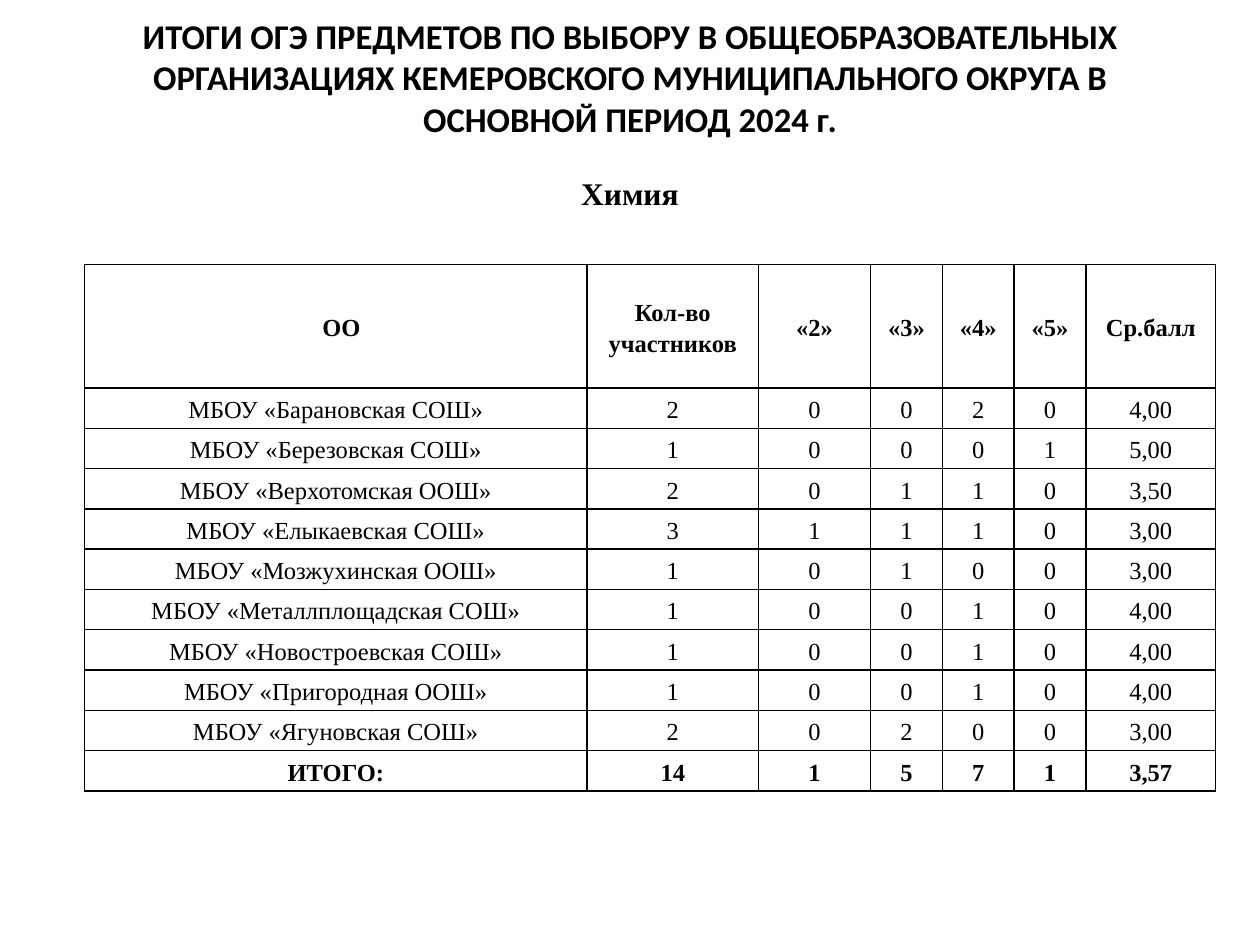
from typing import NamedTuple

from lxml.etree import SubElement
from pptx import Presentation
from pptx.dml.color import RGBColor
from pptx.enum.text import MSO_ANCHOR, PP_ALIGN
from pptx.oxml.ns import qn
from pptx.util import Inches, Pt

COLORS = {"text": "000000", "border": "000000", "background": "FFFFFF"}
SERIF = "Times New Roman"
COLUMN_WIDTHS = [3.99, 1.36, 0.89, 0.57, 0.57, 0.57, 1.03]
HEADER_HEIGHT, ROW_HEIGHT = 0.98, 0.32
CELL_MARGIN = 0.06


class Result(NamedTuple):
    school: str
    participants: str
    twos: str
    threes: str
    fours: str
    fives: str
    average: str


HEADER = Result("ОО", "Кол-во участников", "«2»", "«3»", "«4»", "«5»", "Ср.балл")
SCHOOLS = [
    Result("МБОУ «Барановская СОШ»", "2", "0", "0", "2", "0", "4,00"),
    Result("МБОУ «Березовская СОШ»", "1", "0", "0", "0", "1", "5,00"),
    Result("МБОУ «Верхотомская ООШ»", "2", "0", "1", "1", "0", "3,50"),
    Result("МБОУ «Елыкаевская СОШ»", "3", "1", "1", "1", "0", "3,00"),
    Result("МБОУ «Мозжухинская ООШ»", "1", "0", "1", "0", "0", "3,00"),
    Result("МБОУ «Металлплощадская СОШ»", "1", "0", "0", "1", "0", "4,00"),
    Result("МБОУ «Новостроевская СОШ»", "1", "0", "0", "1", "0", "4,00"),
    Result("МБОУ «Пригородная ООШ»", "1", "0", "0", "1", "0", "4,00"),
    Result("МБОУ «Ягуновская СОШ»", "2", "0", "2", "0", "0", "3,00"),
]
TOTAL = Result("ИТОГО:", "14", "1", "5", "7", "1", "3,57")


def write_text(text_frame, text: str, *, size: float, font: str = SERIF,
               bold: bool = True, line_spacing: float = 1.0) -> None:
    """Write one centred paragraph."""
    text_frame.word_wrap = True
    paragraph = text_frame.paragraphs[0]
    paragraph.alignment = PP_ALIGN.CENTER
    paragraph.line_spacing = line_spacing
    run = paragraph.add_run()
    run.text = text
    run.font.name = font
    run.font.size = Pt(size)
    run.font.bold = bold
    run.font.color.rgb = RGBColor.from_string(COLORS["text"])


def add_heading(slide, text: str, left: float, top: float, width: float,
                height: float, **text_format) -> None:
    shape = slide.shapes.add_textbox(Inches(left), Inches(top), Inches(width), Inches(height))
    shape.text_frame.vertical_anchor = MSO_ANCHOR.MIDDLE
    write_text(shape.text_frame, text, **text_format)


def set_borders(cell) -> None:
    """Draw a thin line on all four sides, ahead of the cell's fill."""
    properties = cell._tc.get_or_add_tcPr()
    for position, side in enumerate(("a:lnL", "a:lnR", "a:lnT", "a:lnB")):
        line = SubElement(properties, qn(side), w=str(Pt(1)))
        fill = SubElement(line, qn("a:solidFill"))
        SubElement(fill, qn("a:srgbClr"), val=COLORS["border"])
        properties.insert(position, line)


def add_results_table(slide, left: float, top: float, results: list[Result]) -> None:
    height = HEADER_HEIGHT + ROW_HEIGHT * (len(results) - 1)
    table = slide.shapes.add_table(
        len(results), len(COLUMN_WIDTHS), Inches(left), Inches(top),
        Inches(sum(COLUMN_WIDTHS)), Inches(height)).table
    table.horz_banding = False
    for column, width in zip(table.columns, COLUMN_WIDTHS):
        column.width = Inches(width)
    for row, result in zip(table.rows, results):
        is_header = result is HEADER
        row.height = Inches(HEADER_HEIGHT if is_header else ROW_HEIGHT)
        for cell, text in zip(row.cells, result):
            cell.fill.background()
            cell.vertical_anchor = MSO_ANCHOR.MIDDLE
            cell.margin_left = cell.margin_right = Inches(CELL_MARGIN)
            cell.margin_top = cell.margin_bottom = 0
            write_text(cell.text_frame, text, size=14, line_spacing=1.15,
                       bold=is_header or result is TOTAL)
            set_borders(cell)
    # The first heading sits slightly right of centre
    table.cell(0, 0).margin_left = Inches(CELL_MARGIN + 0.09)


def main() -> None:
    presentation = Presentation()
    presentation.slide_width, presentation.slide_height = Inches(10), Inches(7.5)
    slide = presentation.slides.add_slide(presentation.slide_layouts[6])
    slide.background.fill.solid()
    slide.background.fill.fore_color.rgb = RGBColor.from_string(COLORS["background"])

    # Title and subject
    add_heading(slide, "ИТОГИ ОГЭ ПРЕДМЕТОВ ПО ВЫБОРУ В ОБЩЕОБРАЗОВАТЕЛЬНЫХ "
                "ОРГАНИЗАЦИЯХ КЕМЕРОВСКОГО МУНИЦИПАЛЬНОГО ОКРУГА В "
                "ОСНОВНОЙ ПЕРИОД 2024 г.", 0.5, 0.06, 9, 1.1, size=19.8, font="Calibri")
    add_heading(slide, "Химия", 0, 1.33, 10, 0.4, size=18)

    # Results by school
    add_results_table(slide, 0.67, 2.1, [HEADER, *SCHOOLS, TOTAL])
    presentation.save("out.pptx")


if __name__ == "__main__":
    main()
